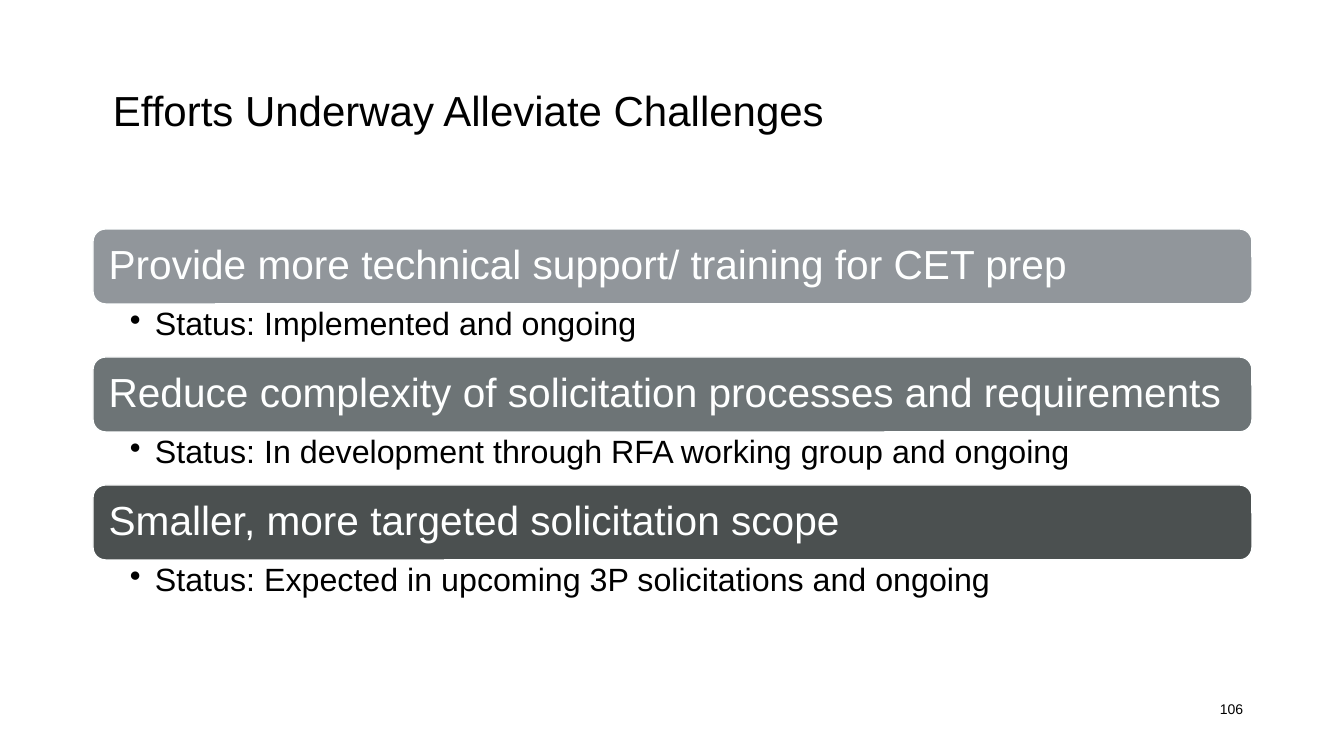
from lxml.etree import SubElement
from pptx import Presentation
from pptx.dml.color import RGBColor
from pptx.enum.shapes import MSO_SHAPE as Shape
from pptx.enum.text import MSO_ANCHOR as Anchor, PP_ALIGN as Align
from pptx.oxml.ns import qn
from pptx.util import Emu, Pt


def px(length):
    return Emu(round(length * 914400 / 100.8))


def write(shape, text, size, color, insets, anchor=Anchor.TOP, spacing=0.9):
    frame = shape.text_frame
    frame.word_wrap = True
    frame.vertical_anchor = anchor
    frame.margin_left, frame.margin_top, frame.margin_right, frame.margin_bottom = map(px, insets)
    paragraph = frame.paragraphs[0]
    paragraph.alignment = Align.LEFT
    paragraph.line_spacing = spacing
    run = paragraph.add_run()
    run.text = text
    run.font.name = "Arial"
    run.font.size = Pt(size)
    run.font.color.rgb = RGBColor.from_string(color)
    return paragraph


LEFT, WIDTH = 93, 1159
BAR_TOP, BAR_HEIGHT, STATUS_HEIGHT = 229, 75, 53
BLACK, WHITE = "000000", "FEFFFF"

efforts = [
    ("Provide more technical support/ training for CET prep",
     "Status: Implemented and ongoing", "91969B"),
    ("Reduce complexity of solicitation processes and requirements",
     "Status: In development through RFA working group and ongoing", "6D7476"),
    ("Smaller, more targeted solicitation scope",
     "Status: Expected in upcoming 3P solicitations and ongoing", "4B5050"),
]

presentation = Presentation()
presentation.slide_width = px(1344)
presentation.slide_height = px(756)
slide = presentation.slides.add_slide(presentation.slide_layouts[6])
shapes = slide.shapes

title = shapes.add_textbox(px(LEFT), px(40), px(WIDTH), px(146))
write(title, "Efforts Underway Alleviate Challenges", 30, BLACK, (20, 10, 20, 10), Anchor.MIDDLE)

for index, (effort, status, color) in enumerate(efforts):
    top = BAR_TOP + index * (BAR_HEIGHT + STATUS_HEIGHT)
    bar = shapes.add_shape(Shape.ROUNDED_RECTANGLE, px(LEFT), px(top), px(WIDTH), px(BAR_HEIGHT))
    bar.shadow.inherit = False
    bar.fill.solid()
    bar.fill.fore_color.rgb = RGBColor.from_string(color)
    bar.line.color.rgb = RGBColor.from_string(WHITE)
    bar.line.width = Pt(1)
    write(bar, effort, 29, WHITE, (12, 12, 12, 12), Anchor.MIDDLE)

    status_box = shapes.add_textbox(px(LEFT), px(top + BAR_HEIGHT), px(WIDTH), px(STATUS_HEIGHT))
    paragraph = write(status_box, status, 23, BLACK, (37, 4, 23, 4))
    properties = paragraph._p.get_or_add_pPr()
    properties.set("marL", str(px(25)))
    properties.set("indent", str(-px(25)))
    SubElement(properties, qn("a:buChar"), char="•")

number = shapes.add_textbox(px(1209), px(696), px(45), px(27))
paragraph = write(number, "106", 10, BLACK, (10, 5, 10, 5), spacing=1.0)
paragraph.alignment = Align.CENTER
number.text_frame.word_wrap = False

presentation.save("out.pptx")
